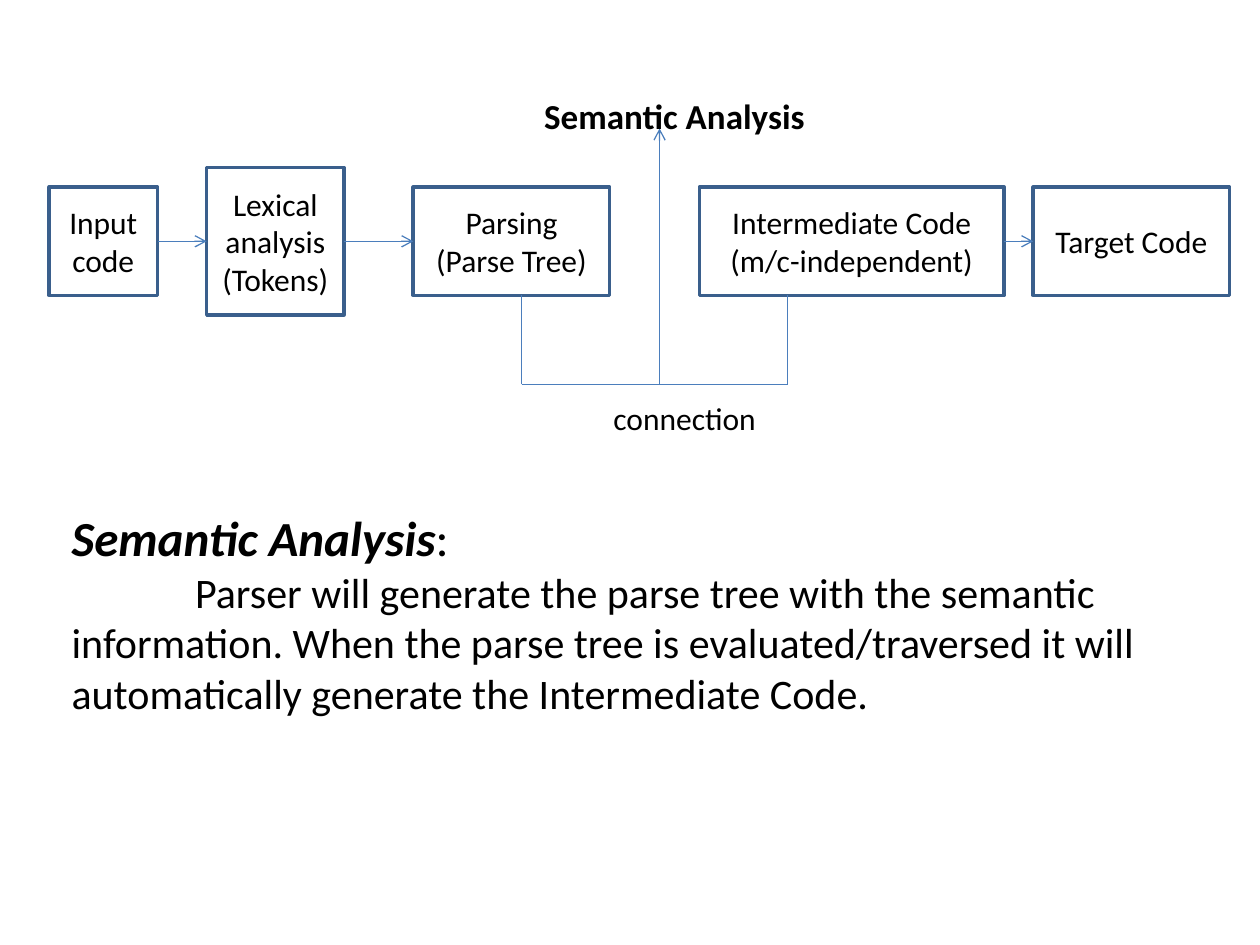
from lxml.etree import SubElement
from pptx import Presentation
from pptx.dml.color import RGBColor as Rgb
from pptx.enum.shapes import MSO_CONNECTOR as Connector, MSO_SHAPE as Shape
from pptx.enum.text import MSO_ANCHOR as Anchor, PP_ALIGN as Align
from pptx.oxml.ns import qn
from pptx.util import Inches, Pt

COLORS = {"box": "FFFFFF", "border": "3A5F8C", "link": "4B7EBC", "text": "000000"}

# The slide is a grid of 100 columns by 75 rows
CELL = Inches(0.1)
COLUMNS, ROWS = 100, 75

FLOW_MIDDLE = 19.15
CONNECTION_ROW = 30.5

# Stage of the flow: left column, width, height, lines of text
STAGES = [
    (3.9, 8.6, 8.6, ["Input code"]),
    (16.4, 10.9, 11.7, ["Lexical analysis", "(Tokens)"]),
    (32.8, 15.6, 8.6, ["Parsing (Parse Tree)"]),
    (55.5, 24.2, 8.6, ["Intermediate Code", "(m/c-independent)"]),
    (82, 15.6, 8.6, ["Target Code"]),
]


def cells(*values):
    return [round(value * CELL) for value in values]


def color(name):
    return Rgb.from_string(COLORS[name])


def add_span(para, text, size, **styles):
    span = para.add_run()
    span.text = text
    formats = {"name": "Calibri", "size": Pt(size), **styles}
    for name, value in formats.items():
        setattr(span.font, name, value)
    span.font.color.rgb = color("text")


def add_stage(page, left, width, height, lines):
    top = FLOW_MIDDLE - height / 2
    box = page.shapes.add_shape(Shape.RECTANGLE, *cells(left, top, width, height))
    box.shadow.inherit = False
    box.fill.solid()
    box.fill.fore_color.rgb = color("box")
    box.line.color.rgb = color("border")
    box.line.width = Pt(2)
    frame = box.text_frame
    frame.word_wrap = True
    frame.vertical_anchor = Anchor.MIDDLE
    for index, line in enumerate(lines):
        para = frame.add_paragraph() if index else frame.paragraphs[0]
        para.alignment = Align.CENTER
        add_span(para, line, 18)


def add_text_box(page, left, top, width, height):
    box = page.shapes.add_textbox(*cells(left, top, width, height))
    box.text_frame.word_wrap = True
    return box.text_frame


def add_link(page, start, end, arrow=False):
    link = page.shapes.add_connector(Connector.STRAIGHT, *cells(*start, *end))
    link.line.color.rgb = color("link")
    link.line.width = Pt(0.75)
    if arrow:
        SubElement(link.line._get_or_add_ln(), qn("a:tailEnd"), type="arrow")
    SubElement(link._element.spPr, qn("a:effectLst"))


def add_flow(page):
    for stage in STAGES:
        add_stage(page, *stage)
    # Arrows between neighbours, except across the semantic analysis gap
    for index in (0, 1, 3):
        left, width = STAGES[index][:2]
        next_left = STAGES[index + 1][0]
        add_link(page, (left + width, FLOW_MIDDLE), (next_left, FLOW_MIDDLE), arrow=True)


def add_connection(page):
    # Bracket under the two stages, with an arrow up to the heading
    left, middle, right = 41.4, 52.35, 62.5
    add_link(page, (left, CONNECTION_ROW), (right, CONNECTION_ROW))
    for column in (left, right):
        add_link(page, (column, CONNECTION_ROW), (column, 23.4))
    add_link(page, (middle, CONNECTION_ROW), (middle, 10.2), arrow=True)

    heading = add_text_box(page, 42.2, 7, 24.2, 4.4)
    add_span(heading.paragraphs[0], "Semantic Analysis", 20, bold=True)
    label = add_text_box(page, 47.7, 31.2, 18.8, 4)
    add_span(label.paragraphs[0], "connection", 18)


def add_explanation(page):
    frame = add_text_box(page, 4.7, 39.8, 93, 20.9)
    title = frame.paragraphs[0]
    add_span(title, "Semantic Analysis", 28, bold=True, italic=True)
    add_span(title, ":", 28)
    body = frame.add_paragraph()
    body._p.get_or_add_pPr().set("indent", str(cells(9.8)[0]))
    add_span(
        body,
        "Parser will generate the parse tree with the semantic information. "
        "When the parse tree is evaluated/traversed it will automatically "
        "generate the Intermediate Code.",
        24,
    )


def main():
    deck = Presentation()
    deck.slide_width, deck.slide_height = cells(COLUMNS, ROWS)
    page = deck.slides.add_slide(deck.slide_layouts[6])
    add_flow(page)
    add_connection(page)
    add_explanation(page)
    deck.save("out.pptx")


if __name__ == "__main__":
    main()
